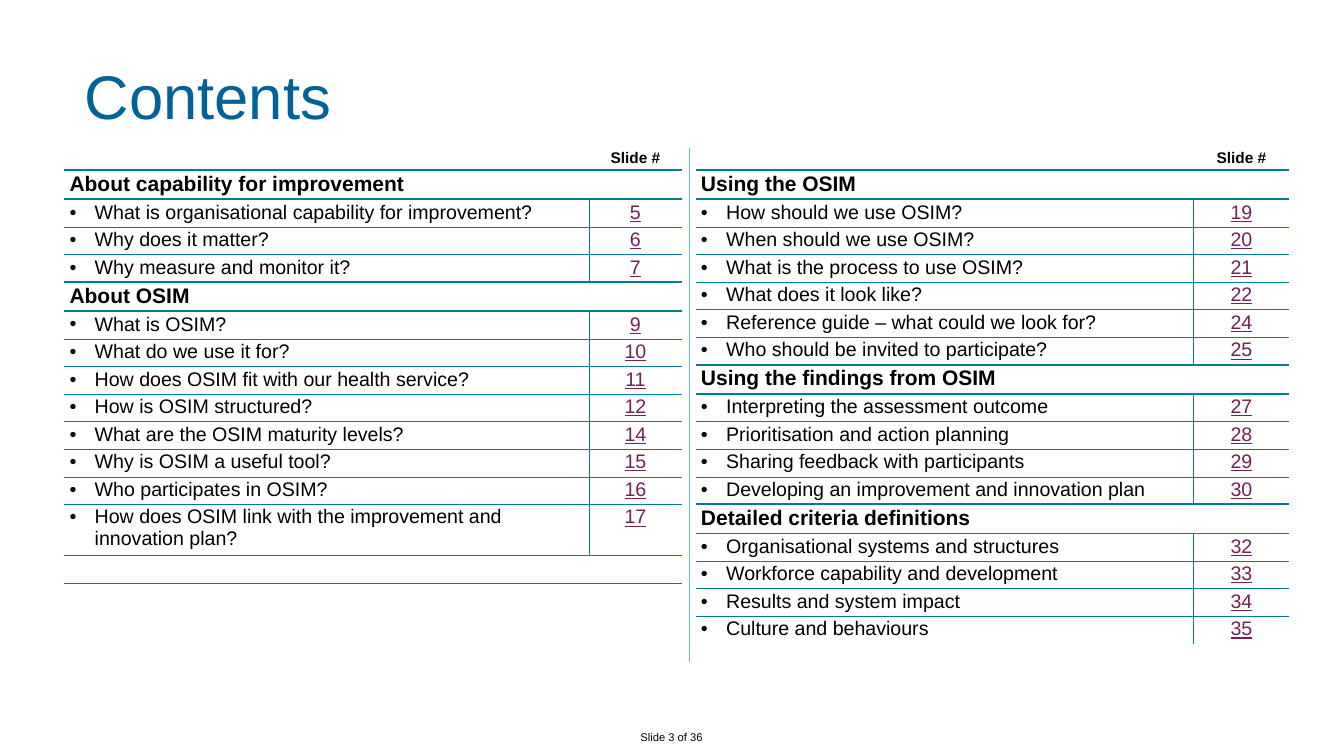
from dataclasses import dataclass

from lxml import etree
from pptx import Presentation
from pptx.dml.color import RGBColor
from pptx.enum.shapes import MSO_CONNECTOR as CONNECTOR
from pptx.enum.text import MSO_ANCHOR as ANCHOR, MSO_AUTO_SIZE as AUTO_SIZE, PP_ALIGN as ALIGN
from pptx.oxml.ns import qn
from pptx.util import Inches, Pt


@dataclass(frozen=True)
class Theme:
    font: str = "Arial"
    title: str = "006298"
    text: str = "000000"
    number: str = "722257"
    rule: str = "007F92"
    divider: str = "5FC0C6"
    title_size: int = 88
    title_spacing: int = 108
    header_size: int = 22
    section_size: int = 30
    item_size: int = 28
    footer_size: int = 16
    thin: float = 0.5
    thick: float = 3


THEME = Theme()
ROW_HEIGHT = 0.41
BULLET_INDENT = 0.5
NO_STYLE = "{2D5ABB26-0587-4C30-8999-92F81FD0307C}"

LEFT_SECTIONS = [
    ("About capability for improvement", [
        ("What is organisational capability for improvement?", 5),
        ("Why does it matter?", 6),
        ("Why measure and monitor it?", 7)]),
    ("About OSIM", [
        ("What is OSIM?", 9),
        ("What do we use it for?", 10),
        ("How does OSIM fit with our health service?", 11),
        ("How is OSIM structured?", 12),
        ("What are the OSIM maturity levels?", 14),
        ("Why is OSIM a useful tool?", 15),
        ("Who participates in OSIM?", 16),
        ("How does OSIM link with the improvement and innovation plan?", 17)]),
]
RIGHT_SECTIONS = [
    ("Using the OSIM", [
        ("How should we use OSIM?", 19),
        ("When should we use OSIM?", 20),
        ("What is the process to use OSIM?", 21),
        ("What does it look like?", 22),
        ("Reference guide – what could we look for?", 24),
        ("Who should be invited to participate?", 25)]),
    ("Using the findings from OSIM", [
        ("Interpreting the assessment outcome", 27),
        ("Prioritisation and action planning", 28),
        ("Sharing feedback with participants", 29),
        ("Developing an improvement and innovation plan", 30)]),
    ("Detailed criteria definitions", [
        ("Organisational systems and structures", 32),
        ("Workforce capability and development", 33),
        ("Results and system impact", 34),
        ("Culture and behaviours", 35)]),
]


def write(frame, text, size, color=THEME.text, bold=False, underline=False, align=ALIGN.LEFT):
    frame.text = text
    paragraph = frame.paragraphs[0]
    paragraph.alignment = align
    for run in paragraph.runs:
        font = run.font
        font.name, font.size = THEME.font, Pt(size)
        font.bold, font.underline = bold, underline
        font.color.rgb = RGBColor.from_string(color)
    return paragraph


def add_bullet(paragraph):
    paragraph.level = 1
    properties = paragraph._p.get_or_add_pPr()
    properties.set("marL", str(Inches(BULLET_INDENT)))
    properties.set("indent", str(-Inches(BULLET_INDENT)))
    etree.SubElement(properties, qn("a:buFont"), typeface=THEME.font)
    etree.SubElement(properties, qn("a:buChar"), char="•")


def set_borders(cell, **widths):
    """Draw the sides named L, R, T or B; the other sides stay empty."""
    cell.fill.background()
    properties = cell._tc.get_or_add_tcPr()
    for position, side in enumerate("LRTB"):
        width = widths.get(side, 0)
        line = etree.Element(qn(f"a:ln{side}"), w=str(Pt(width)))
        if width:
            fill = etree.SubElement(line, qn("a:solidFill"))
            etree.SubElement(fill, qn("a:srgbClr"), val=THEME.rule)
        else:
            etree.SubElement(line, qn("a:noFill"))
        properties.insert(position, line)


def add_title(slide, left, top, width, height):
    title = slide.shapes.title
    title.left, title.top = Inches(left), Inches(top)
    title.width, title.height = Inches(width), Inches(height)
    frame = title.text_frame
    frame.margin_left = frame.margin_right = frame.margin_top = frame.margin_bottom = 0
    frame.vertical_anchor = ANCHOR.MIDDLE
    frame.auto_size = AUTO_SIZE.NONE
    paragraph = write(frame, "Contents", THEME.title_size, THEME.title)
    paragraph.line_spacing = Pt(THEME.title_spacing)


def add_contents(slide, left, top, columns, height, sections, divider_width, blank_rows=0):
    rows = 1 + sum(1 + len(items) for _, items in sections) + blank_rows
    graphic = slide.shapes.add_table(rows, 2, Inches(left), Inches(top),
                                     Inches(sum(columns)), Inches(rows * ROW_HEIGHT))
    table = graphic.table
    table.first_row = table.horz_banding = False
    table._tbl.tblPr.find(qn("a:tableStyleId")).text = NO_STYLE
    for column, width in zip(table.columns, columns):
        column.width = Inches(width)
    for row in table.rows:
        row.height = Inches(ROW_HEIGHT)
        for cell in row.cells:
            cell.margin_top = cell.margin_bottom = Inches(0.04)

    # Header row
    for cell in table.rows[0].cells:
        set_borders(cell, B=THEME.thick)
    write(table.cell(0, 1).text_frame, "Slide #", THEME.header_size, bold=True, align=ALIGN.CENTER)

    # Sections, each a merged heading above its items
    row = 1
    for section, (heading, items) in enumerate(sections):
        heading_cell, spanned = table.cell(row, 0), table.cell(row, 1)
        heading_cell.merge(spanned)
        write(heading_cell.text_frame, heading, THEME.section_size, bold=True)
        for cell in (heading_cell, spanned):
            set_borders(cell, T=THEME.thick, B=THEME.thick)
        row += 1
        for index, (topic, number) in enumerate(items):
            above = THEME.thin if index else THEME.thick
            below = THEME.thin
            if index == len(items) - 1:
                if section < len(sections) - 1:
                    below = THEME.thick
                elif not blank_rows:
                    below = 0
            topic_cell, number_cell = table.cell(row, 0), table.cell(row, 1)
            add_bullet(write(topic_cell.text_frame, topic, THEME.item_size))
            write(number_cell.text_frame, str(number), THEME.item_size, THEME.number,
                  underline=True, align=ALIGN.CENTER)
            set_borders(topic_cell, R=divider_width, T=above, B=below)
            set_borders(number_cell, L=divider_width, T=above, B=below)
            row += 1

    # Spare rows, the first one ruled off
    for blank in range(blank_rows):
        ruling = {} if blank else {"T": THEME.thin, "B": THEME.thin}
        for cell in table.rows[row + blank].cells:
            set_borders(cell, **ruling)
            end = cell.text_frame.paragraphs[0]._p.get_or_add_endParaRPr()
            end.set("sz", str(THEME.item_size * 100))
    graphic.height = Inches(height)


def add_divider(slide, x, top, bottom):
    divider = slide.shapes.add_connector(CONNECTOR.STRAIGHT, Inches(x), Inches(top),
                                         Inches(x), Inches(bottom))
    divider.line.color.rgb = RGBColor.from_string(THEME.divider)
    divider.line.width = Pt(0.75)
    etree.SubElement(divider._element.spPr, qn("a:effectLst"))


def add_footer(slide, left, top, width, height):
    footer = slide.shapes.add_textbox(Inches(left), Inches(top), Inches(width), Inches(height))
    footer.text_frame.word_wrap = True
    write(footer.text_frame, "Slide 3 of 36", THEME.footer_size, align=ALIGN.CENTER)


def main():
    deck = Presentation()
    deck.slide_width, deck.slide_height = Inches(26.67), Inches(15)
    slide = deck.slides.add_slide(deck.slide_layouts[5])
    add_footer(slide, 11.63, 14.45, 3.39, 0.37)
    add_title(slide, 1.68, 1.23, 23.15, 1.27)
    top = 2.93
    add_contents(slide, 1.28, top, (10.41, 1.84), 10.63, LEFT_SECTIONS, THEME.thin, blank_rows=4)
    add_contents(slide, 13.81, top, (9.88, 1.89), 10.2, RIGHT_SECTIONS, 1.5)
    add_divider(slide, 13.67, top, 13.13)
    deck.save("out.pptx")


if __name__ == "__main__":
    main()
